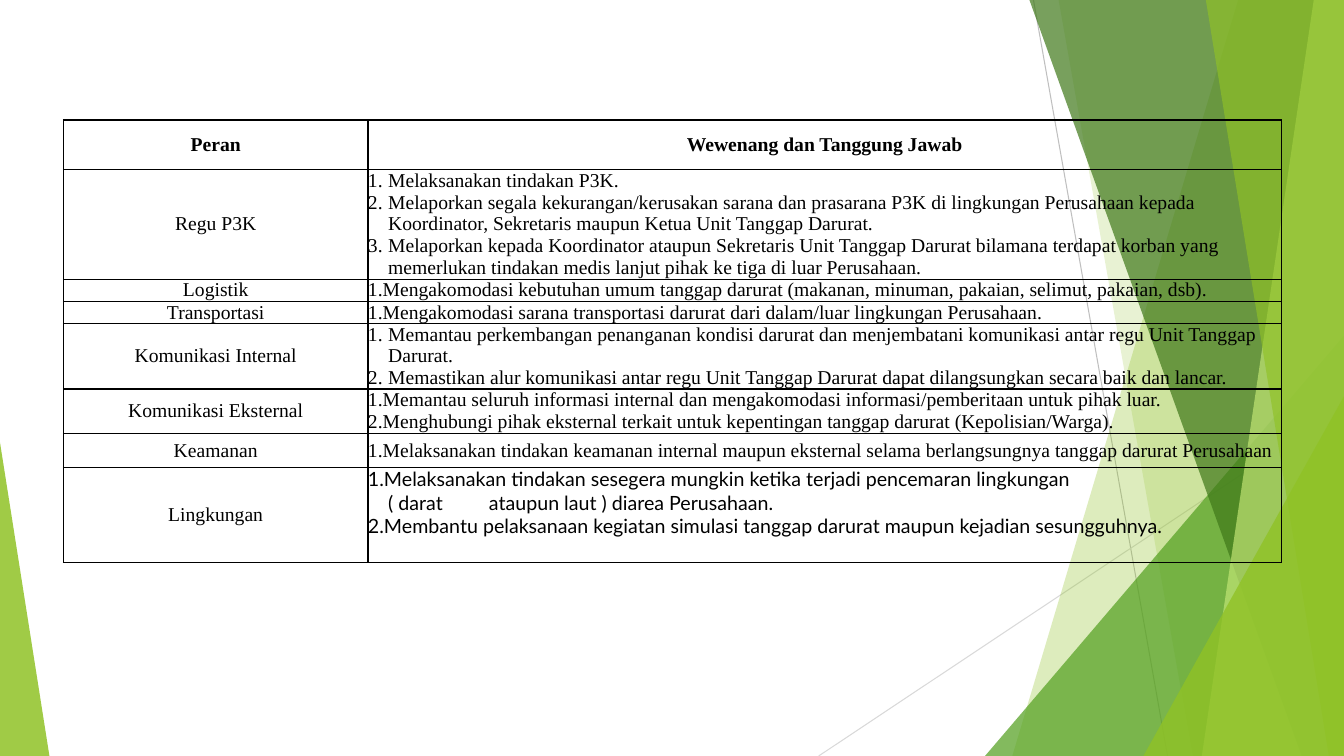
from collections import namedtuple

from lxml import etree
from pptx import Presentation
from pptx.dml.color import RGBColor
from pptx.enum.shapes import MSO_CONNECTOR, MSO_SHAPE
from pptx.enum.text import MSO_ANCHOR, PP_ALIGN
from pptx.oxml.ns import qn
from pptx.util import Inches, Pt

STRAIGHT = MSO_CONNECTOR.STRAIGHT
TRIANGLE = MSO_SHAPE.RIGHT_TRIANGLE
PEAK = MSO_SHAPE.ISOSCELES_TRIANGLE
MIDDLE, TOP = MSO_ANCHOR.MIDDLE, MSO_ANCHOR.TOP
CENTER, LEFT = PP_ALIGN.CENTER, PP_ALIGN.LEFT

BLACK = RGBColor(0x00, 0x00, 0x00)
GRAY = RGBColor(0xBF, 0xBF, 0xBF)
LIGHT_GRAY = RGBColor(0xD9, 0xD9, 0xD9)
LIME = RGBColor(0x90, 0xC2, 0x26)
PALE_LIME = RGBColor(0xC0, 0xE4, 0x74)
GREEN = RGBColor(0x54, 0xA0, 0x21)
DARK_GREEN = RGBColor(0x3F, 0x78, 0x19)

SERIF, SANS = "Times New Roman", "Lato"
HANGING = 0.2
WORD_GAP = 1.1

Box = namedtuple("Box", "left top width height")
Row = namedtuple("Row", "height role duties hanging")
SLIDE = Box(0, 0, 13.33, 7.5)
FACETS = Box(8.12, 0, 5.21, 7.5)
LEFT_WEDGE = Box(0, 4.39, 0.49, 3.11)
ROLES = Box(0.63, 1.19, 12.08, 4.39)
COLUMNS = (3.02, 9.06)

HEADER = Row(0.49, "Peran", ["Wewenang dan Tanggung Jawab"], False)
ROWS = [
    Row(1.09, "Regu P3K", [
        "Melaksanakan tindakan P3K.",
        "Melaporkan segala kekurangan/kerusakan sarana dan prasarana P3K di lingkungan "
        "Perusahaan kepada Koordinator, Sekretaris maupun Ketua Unit Tanggap Darurat.",
        "Melaporkan kepada Koordinator ataupun Sekretaris Unit Tanggap Darurat bilamana "
        "terdapat korban yang memerlukan tindakan medis lanjut pihak ke tiga di luar "
        "Perusahaan."], True),
    Row(0.22, "Logistik", [
        "Mengakomodasi kebutuhan umum tanggap darurat (makanan, minuman, pakaian, "
        "selimut, pakaian, dsb)."], False),
    Row(0.22, "Transportasi", [
        "Mengakomodasi sarana transportasi darurat dari dalam/luar lingkungan "
        "Perusahaan."], False),
    Row(0.65, "Komunikasi Internal", [
        "Memantau perkembangan penanganan kondisi darurat dan menjembatani komunikasi "
        "antar regu Unit Tanggap Darurat.",
        "Memastikan alur komunikasi antar regu Unit Tanggap Darurat dapat dilangsungkan "
        "secara baik dan lancar."], True),
    Row(0.44, "Komunikasi Eksternal", [
        "Memantau seluruh informasi internal dan mengakomodasi informasi/pemberitaan "
        "untuk pihak luar.",
        "Menghubungi pihak eksternal terkait untuk kepentingan tanggap darurat "
        "(Kepolisian/Warga)."], False),
    Row(0.34, "Keamanan", [
        "Melaksanakan tindakan keamanan internal maupun eksternal selama berlangsungnya "
        "tanggap darurat Perusahaan"], False),
]
ENVIRONMENT = Row(0.94, "Lingkungan", [
    "1.Melaksanakan tindakan sesegera mungkin ketika terjadi pencemaran lingkungan\v"
    "( darat\tataupun laut ) diarea Perusahaan.",
    "2.Membantu pelaksanaan kegiatan simulasi tanggap darurat maupun kejadian "
    "sesungguhnya."], True)


def paint(shape, color, opacity):
    """Fill a shape with a see-through colour and no outline."""
    shape.shadow.inherit = False
    shape.line.fill.background()
    shape.fill.solid()
    shape.fill.fore_color.rgb = color
    color_node = shape.fill._xPr.find(qn("a:solidFill"))[0]
    etree.SubElement(color_node, qn("a:alpha"), val=str(opacity * 1000))


def add_hairline(page, start, end, color):
    line = page.shapes.add_connector(STRAIGHT, *map(Inches, start + end))
    line.line.color.rgb = color
    line.line.width = Pt(0.75)
    etree.SubElement(line._element.spPr, qn("a:effectLst"))


def add_panel(page, box, top_x, bottom_x, color, opacity):
    """Draw a panel from a slanted left edge to the right side of the box."""
    right, bottom = box.left + box.width, box.top + box.height
    corners = [(box.left + top_x, box.top), (right, box.top),
               (right, bottom), (box.left + bottom_x, bottom)]
    points = [(Inches(x), Inches(y)) for x, y in corners]
    builder = page.shapes.build_freeform(*points[0], scale=1.0)
    builder.add_line_segments(points[1:], close=True)
    paint(builder.convert_to_shape(), color, opacity)


def add_wedge(page, box, peak, color, opacity):
    wedge = page.shapes.add_shape(PEAK, *map(Inches, box))
    wedge.adjustments[0] = peak
    paint(wedge, color, opacity)


def add_corner_wedge(page, box, width, height, color, opacity):
    """Draw a wedge in the bottom right corner of the box."""
    corner = Box(box.left + box.width - width, box.top + box.height - height,
                 width, height)
    add_wedge(page, corner, 1, color, opacity)


def add_facets(page, box):
    right, bottom = box.left + box.width, box.top + box.height
    add_hairline(page, (box.left + 2.13, box.top), (box.left + 3.46, bottom), GRAY)
    add_hairline(page, (right, box.top + 4.03), (box.left, bottom), LIGHT_GRAY)
    add_panel(page, box, 4.16, 1.92, LIME, 30)
    add_panel(page, box, 2.38, 3.71, LIME, 20)
    add_corner_wedge(page, box, 3.56, 4.17, GREEN, 72)
    add_panel(page, box, 2.09, 4.79, DARK_GREEN, 70)
    add_panel(page, box, 4.91, 3.8, PALE_LIME, 70)
    add_panel(page, box, 3.84, 5.06, LIME, 65)
    add_corner_wedge(page, box, 1.99, 3.57, LIME, 80)


def set_borders(cell):
    properties = cell._tc.get_or_add_tcPr()
    for index, side in enumerate(("lnL", "lnR", "lnT", "lnB")):
        border = etree.Element(qn(f"a:{side}"), w=str(Pt(1)))
        fill = etree.SubElement(border, qn("a:solidFill"))
        etree.SubElement(fill, qn("a:srgbClr"), val=str(BLACK))
        properties.insert(index, border)


def format_list_item(para, numbered, hanging):
    properties = para._p.get_or_add_pPr()
    if hanging:
        properties.set("marL", str(Inches(HANGING)))
        properties.set("indent", str(-Inches(HANGING)))
    if numbered:
        etree.SubElement(properties, qn("a:buFont"), typeface="+mj-lt")
        etree.SubElement(properties, qn("a:buAutoNum"), type="arabicPeriod")
    else:
        etree.SubElement(properties, qn("a:buNone"))
        stops = etree.SubElement(properties, qn("a:tabLst"))
        etree.SubElement(stops, qn("a:tab"), pos=str(Inches(WORD_GAP + HANGING)), algn="l")


def fill_cell(cell, texts, align=CENTER, anchor=MIDDLE, font=SERIF, bold=False):
    cell_format = {"margin_left": 0, "margin_right": 0, "margin_top": 0,
                   "margin_bottom": 0, "vertical_anchor": anchor}
    font_format = {"name": font, "size": Pt(14), "bold": bold}
    for name, value in cell_format.items():
        setattr(cell, name, value)
    cell.fill.background()
    set_borders(cell)
    frame = cell.text_frame
    for index, text in enumerate(texts):
        para = frame.add_paragraph() if index else frame.paragraphs[0]
        para.text = text
        para.alignment = align
        for span in para.runs:
            for name, value in font_format.items():
                setattr(span.font, name, value)
            span.font.color.rgb = BLACK


def add_roles_table(page, box):
    rows = [HEADER, *ROWS, ENVIRONMENT]
    table = page.shapes.add_table(len(rows), len(COLUMNS), *map(Inches, box)).table
    table.first_row = table.horz_banding = False
    for column, width in zip(table.columns, COLUMNS):
        column.width = Inches(width)
    for index, row in enumerate(rows):
        table.rows[index].height = Inches(row.height)
        role, duties = table.cell(index, 0), table.cell(index, 1)
        fill_cell(role, [row.role], bold=row is HEADER)
        if row is HEADER:
            fill_cell(duties, row.duties, bold=True)
            continue
        if row is ENVIRONMENT:
            fill_cell(duties, row.duties, LEFT, TOP, SANS)
        else:
            fill_cell(duties, row.duties, LEFT)
        for para in duties.text_frame.paragraphs:
            format_list_item(para, row is not ENVIRONMENT, row.hanging)


def main():
    deck = Presentation()
    deck.slide_width, deck.slide_height = Inches(SLIDE.width), Inches(SLIDE.height)
    page = deck.slides.add_slide(deck.slide_layouts[6])
    add_facets(page, FACETS)
    add_wedge(page, LEFT_WEDGE, 0, LIME, 85)
    add_roles_table(page, ROLES)
    deck.save("out.pptx")


if __name__ == "__main__":
    main()
